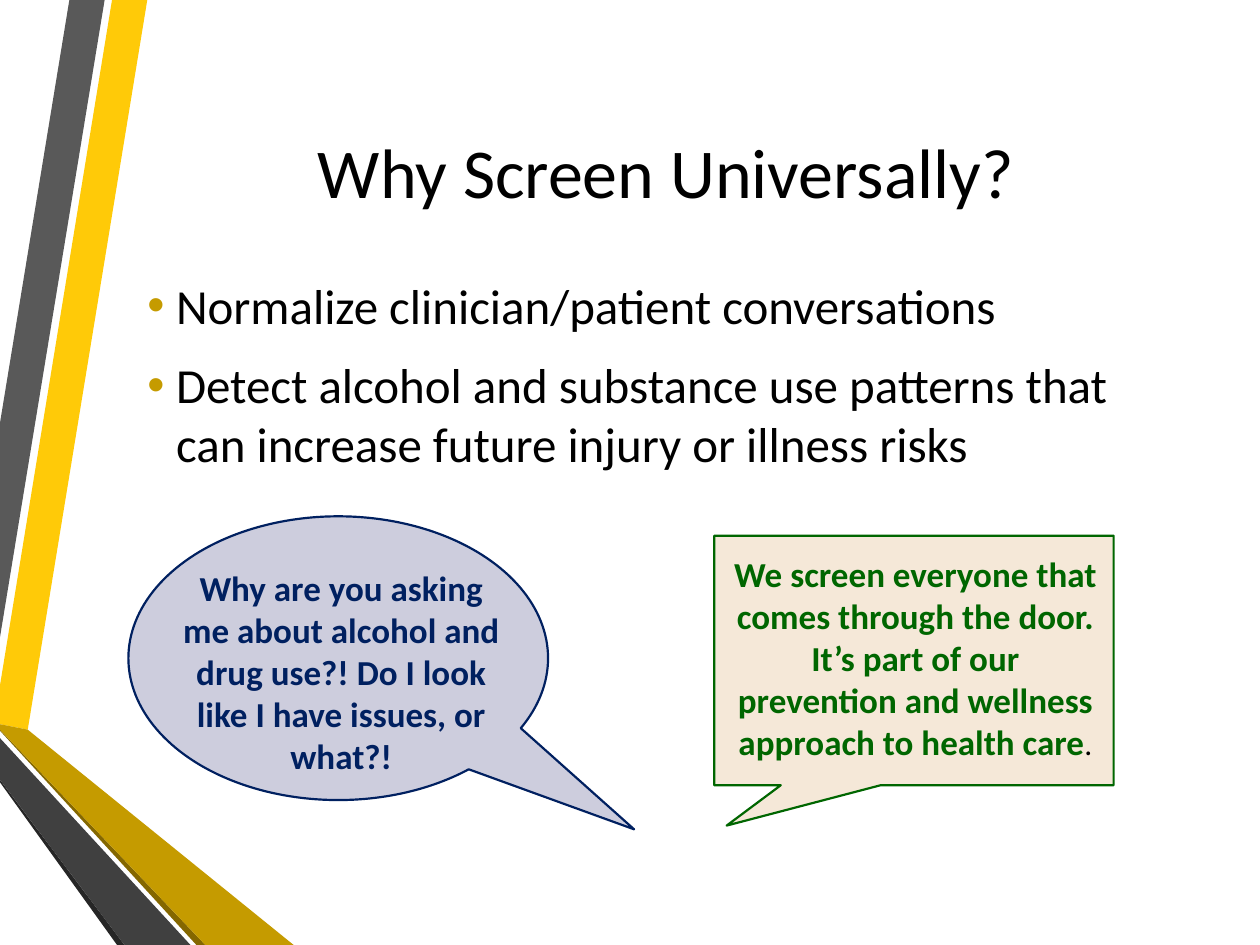
import pptx
import pptx.dml.color
import pptx.enum.shapes
import pptx.enum.text
import pptx.oxml
import pptx.oxml.ns
import pptx.util

Cm = pptx.util.Cm
Pt = pptx.util.Pt
RGBColor = pptx.dml.color.RGBColor
Shape = pptx.enum.shapes.MSO_SHAPE
Align = pptx.enum.text.PP_ALIGN
Anchor = pptx.enum.text.MSO_ANCHOR

BLACK = RGBColor(0x00, 0x00, 0x00)
YELLOW = RGBColor(0xFF, 0xCA, 0x08)
GOLD = RGBColor(0xC5, 0x9B, 0x00)
DARK_GOLD = RGBColor(0x84, 0x67, 0x00)
GREY = RGBColor(0x59, 0x59, 0x59)
DARK_GREY = RGBColor(0x40, 0x40, 0x40)
CHARCOAL = RGBColor(0x26, 0x26, 0x26)
NAVY = RGBColor(0x00, 0x20, 0x60)
LAVENDER = RGBColor(0xCD, 0xCD, 0xDD)
GREEN = RGBColor(0x00, 0x66, 0x00)
CREAM = RGBColor(0xF5, 0xE8, 0xD8)

# Corner ribbons as (colour, outline in cm), back to front
RIBBONS = [
    (YELLOW, [(0, 13.82), (0, 14.6), (0.56, 14.71), (2.97, 0), (2.26, 0)]),
    (GREY, [(2.11, 0), (1.4, 0), (0, 8.53), (0, 12.85)]),
    (CHARCOAL, [(0, 15.72), (0, 15.77), (2.36, 19.05), (2.51, 19.05)]),
    (DARK_GOLD, [(0, 14.71), (0, 14.73), (3.96, 19.05), (4.14, 19.05)]),
    (GOLD, [(0, 14.71), (4.14, 19.05), (5.92, 19.05), (0.56, 14.71), (0, 14.6)]),
    (DARK_GREY, [(0, 15.72), (2.51, 19.05), (3.84, 19.05), (0, 14.88)]),
]


class SlideBuilder:
    font_name = "Calibri"
    outline_width = Pt(1.25)

    def __init__(self, page):
        self.page = page

    def style_font(self, font, size, colour, bold=False):
        font.name = self.font_name
        font.size = Pt(size)
        font.color.rgb = colour
        font.bold = bold

    def place(self, shape, area):
        shape.left, shape.top, shape.width, shape.height = map(Cm, area)

    def title(self, text, area):
        title = self.page.shapes.title
        self.place(title, area)
        title.text_frame.text = text
        title.text_frame.vertical_anchor = Anchor.MIDDLE
        para = title.text_frame.paragraphs[0]
        para.alignment = Align.CENTER
        self.style_font(para.font, 40, BLACK)

    def ribbon(self, colour, points):
        start, *others = [(Cm(x), Cm(y)) for x, y in points]
        builder = self.page.shapes.build_freeform(*start)
        builder.add_line_segments(others, close=True)
        shape = builder.convert_to_shape()
        shape.shadow.inherit = False
        shape.fill.solid()
        shape.fill.fore_color.rgb = colour
        shape.line.fill.background()

    def text_box(self, area):
        box = self.page.shapes.add_textbox(*map(Cm, area))
        box.text_frame.word_wrap = True
        return box.text_frame

    def bullets(self, items, area):
        frame = self.text_box(area)
        for index, item in enumerate(items):
            para = frame.paragraphs[0] if index == 0 else frame.add_paragraph()
            para.text = item
            para.space_after = Pt(12)
            properties = para._p.get_or_add_pPr()
            properties.set("marL", str(Cm(0.58)))
            properties.set("indent", str(-Cm(0.58)))
            namespace = pptx.oxml.ns.nsdecls("a")
            for markup in (
                f'<a:buClr {namespace}><a:srgbClr val="{GOLD}"/></a:buClr>',
                f'<a:buFont {namespace} typeface="Arial"/>',
                f'<a:buChar {namespace} char="•"/>',
            ):
                properties.append(pptx.oxml.parse_xml(markup))
            self.style_font(para.font, 28, BLACK)

    def callout(self, kind, area, tail, fill, colour):
        shape = self.page.shapes.add_shape(kind, *map(Cm, area))
        shape.adjustments[0], shape.adjustments[1] = tail
        shape.shadow.inherit = False
        shape.fill.solid()
        shape.fill.fore_color.rgb = fill
        shape.line.color.rgb = colour
        shape.line.width = self.outline_width

    def speech(self, text, area, colour, ending=""):
        frame = self.text_box(area)
        frame.auto_size = pptx.enum.text.MSO_AUTO_SIZE.SHAPE_TO_FIT_TEXT
        para = frame.paragraphs[0]
        para.alignment = Align.CENTER
        span = para.add_run()
        span.text = text
        self.style_font(span.font, 20, colour, bold=True)
        if ending:
            span = para.add_run()
            span.text = ending
            self.style_font(span.font, 18, BLACK)


def main():
    deck = pptx.Presentation()
    deck.slide_width, deck.slide_height = Cm(25.4), Cm(19.05)
    builder = SlideBuilder(deck.slides.add_slide(deck.slide_layouts[5]))

    # Corner decoration
    for colour, points in RIBBONS:
        builder.ribbon(colour, points)

    # Title and main points
    builder.title("Why Screen Universally?", (2.72, 1.27, 21.41, 4.32))
    builder.bullets(
        [
            "Normalize clinician/patient conversations",
            "Detect alcohol and substance use patterns that can increase "
            "future injury or illness risks",
        ],
        (2.72, 5.42, 21.41, 4.6),
    )

    # Patient's question
    builder.callout(Shape.OVAL_CALLOUT, (2.59, 10.41, 8.46, 5.72),
                    (0.705, 0.603), LAVENDER, NAVY)
    builder.speech(
        "Why are you asking me about alcohol and drug use?! "
        "Do I look like I have issues, or what?!",
        (3.3, 11.3, 7.16, 4.52), NAVY)

    # Clinician's answer
    builder.callout(Shape.RECTANGULAR_CALLOUT, (14.4, 10.8, 8.05, 5.03),
                    (-0.469, 0.662), CREAM, GREEN)
    builder.speech(
        "We screen everyone that comes through the door. It’s part of our "
        "prevention and wellness approach to health care",
        (14.48, 11.02, 7.95, 4.52), GREEN, ending=".")

    deck.save("out.pptx")


if __name__ == "__main__":
    main()
